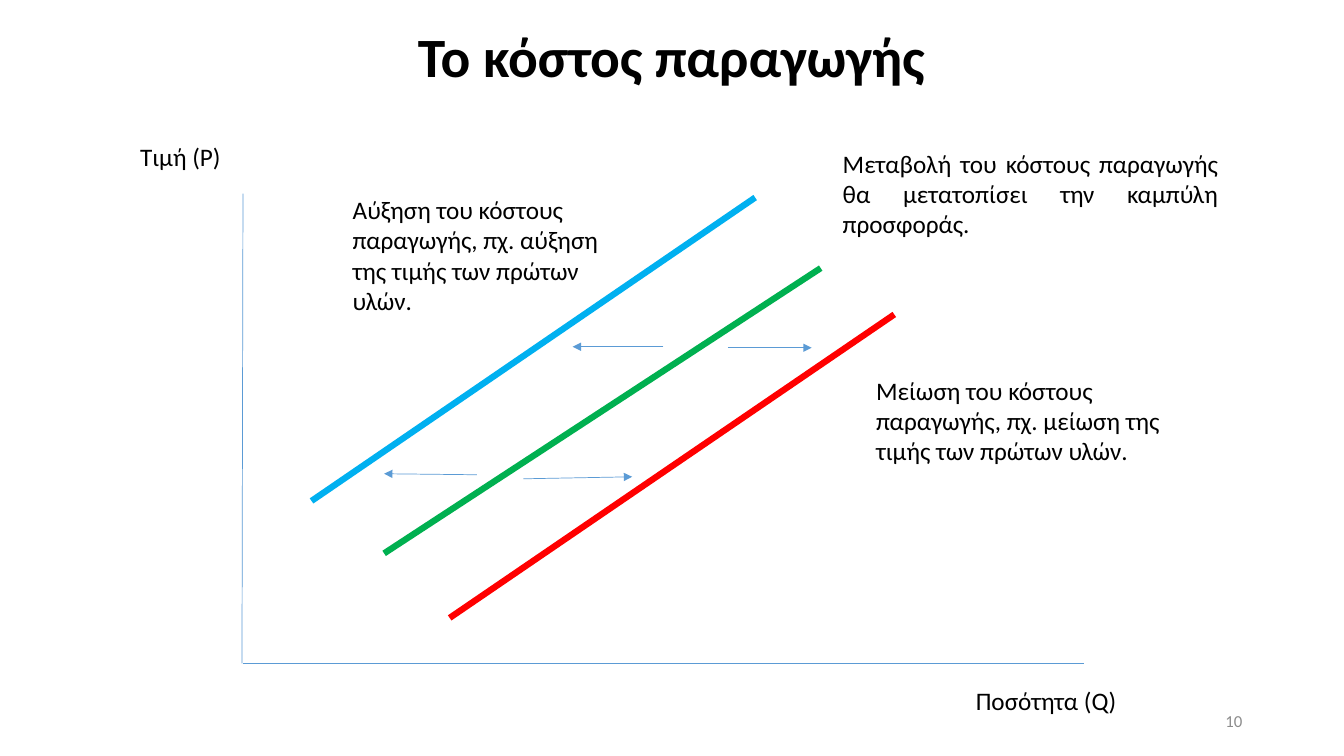
from lxml import etree
from pptx import Presentation
from pptx.dml.color import RGBColor
from pptx.enum.shapes import MSO_CONNECTOR
from pptx.enum.text import MSO_ANCHOR, PP_ALIGN
from pptx.oxml.ns import qn
from pptx.util import Inches, Pt

STRAIGHT = MSO_CONNECTOR.STRAIGHT
TOP, MIDDLE = MSO_ANCHOR.TOP, MSO_ANCHOR.MIDDLE
LEFT, CENTER = PP_ALIGN.LEFT, PP_ALIGN.CENTER
RIGHT, JUSTIFY = PP_ALIGN.RIGHT, PP_ALIGN.JUSTIFY

BLACK, GRAY, STEEL = "000000", "8C8C8C", "5B9BD5"
GREEN, RED, SKY = "00B050", "FF0000", "00B0F0"


def color(code):
    return RGBColor.from_string(code)


class Board:
    font = "Calibri"

    def __init__(self, slide):
        self.slide = slide

    def text(self, box, words, size=18, ink=BLACK, bold=False,
             align=LEFT, anchor=TOP, space=1.0):
        shape = self.slide.shapes.add_textbox(*map(Inches, box))
        frame = shape.text_frame
        frame.word_wrap = True
        frame.vertical_anchor = anchor
        para = frame.paragraphs[0]
        para.alignment = align
        para.line_spacing = space
        run = para.add_run()
        run.text = words
        run.font.name = self.font
        run.font.size = Pt(size)
        run.font.bold = bold
        run.font.color.rgb = color(ink)

    def line(self, start, end, ink=STEEL, width=0.5):
        ends = map(Inches, (*start, *end))
        line = self.slide.shapes.add_connector(STRAIGHT, *ends)
        line.line.color.rgb = color(ink)
        line.line.width = Pt(width)
        etree.SubElement(line._element.spPr, qn("a:effectLst"))
        return line

    def arrow(self, start, end):
        line = self.line(start, end)
        edge = line.line._get_or_add_ln()
        etree.SubElement(edge, qn("a:tailEnd"), type="triangle")

    def curve(self, start, end, ink):
        self.line(start, end, ink, 4.5)


def main():
    deck = Presentation()
    deck.slide_width, deck.slide_height = Inches(13.33), Inches(7.5)
    board = Board(deck.slides.add_slide(deck.slide_layouts[6]))

    board.text((2.35, 0.25, 8.62, 0.68), "Το κόστος παραγωγής", 39.6,
               bold=True, align=CENTER, anchor=MIDDLE, space=0.9)
    board.text((9.42, 6.95, 3, 0.4), "10", 12, GRAY,
               align=RIGHT, anchor=MIDDLE)

    # Axes
    board.line((2.41, 1.92), (2.4, 6.58))
    board.line((10.75, 6.58), (2.41, 6.58))
    board.text((1.29, 1.35, 1.12, 0.4), "Τιμή (P)")
    board.text((9.58, 6.75, 1.74, 0.4), "Ποσότητα (Q)")

    # Supply curves
    board.curve((3.81, 5.49), (8.14, 2.66), GREEN)
    board.curve((4.46, 6.13), (8.87, 3.12), RED)
    board.curve((3.09, 4.97), (7.49, 1.96), SKY)

    # Shifts of the curve
    for start, end in (
        ((7.22, 3.45), (8.05, 3.45)),
        ((5.19, 4.75), (6.27, 4.73)),
        ((6.58, 3.44), (5.68, 3.44)),
        ((4.73, 4.71), (3.81, 4.7)),
    ):
        board.arrow(start, end)

    board.text((8.26, 1.42, 3.92, 1.01),
               "Μεταβολή του κόστους παραγωγής θα μετατοπίσει "
               "την καμπύλη προσφοράς.", align=JUSTIFY)
    board.text((8.59, 3.67, 3.25, 1.01),
               "Μείωση του κόστους παραγωγής, πχ. μείωση της "
               "τιμής των πρώτων υλών.")
    board.text((3.4, 1.88, 2.83, 1.31),
               "Αύξηση του κόστους παραγωγής, πχ. αύξηση της "
               "τιμής των πρώτων υλών.")

    deck.save("out.pptx")


if __name__ == "__main__":
    main()
